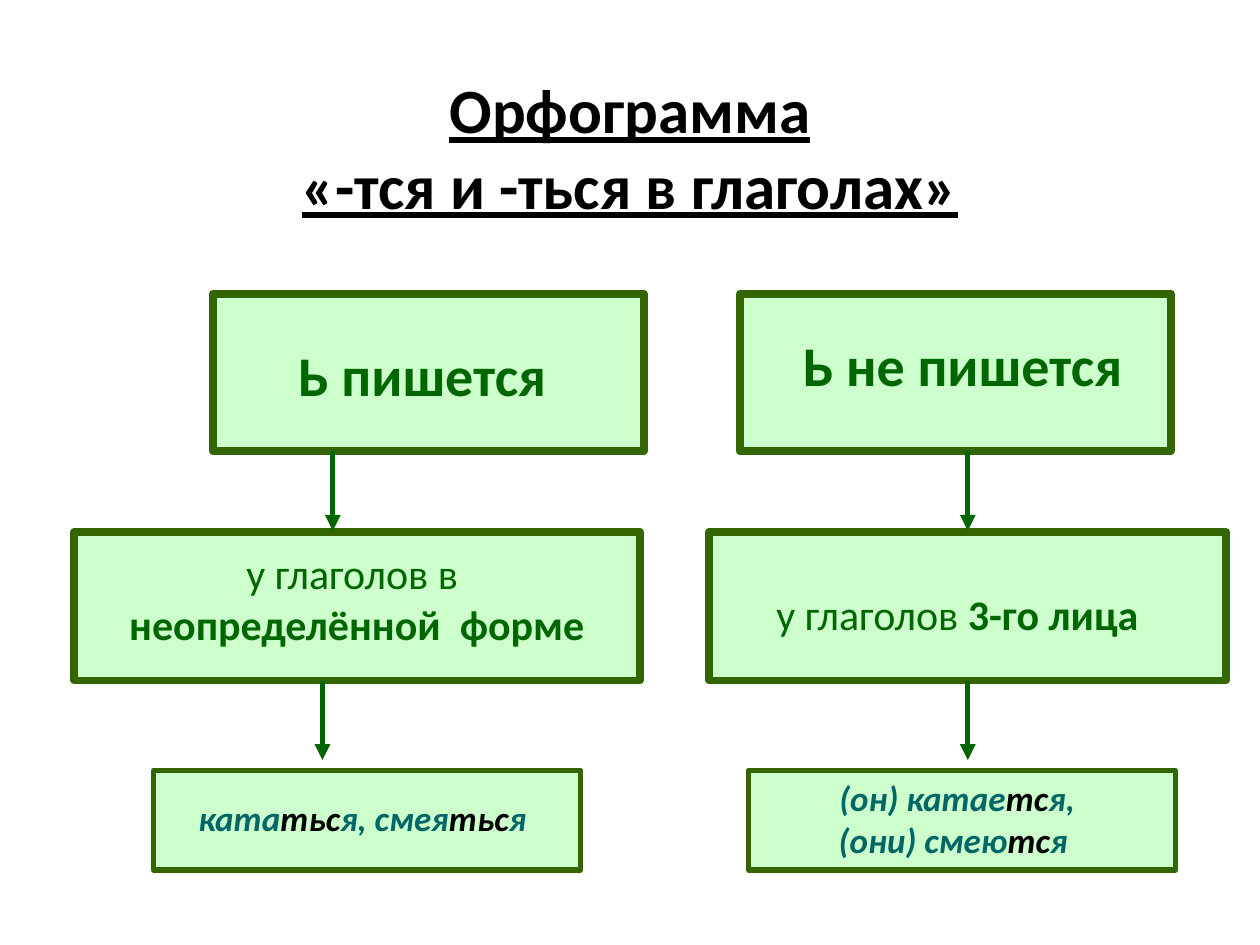
from pptx import Presentation
from pptx.util import Cm, Pt
from pptx.dml.color import RGBColor as Rgb
from pptx.enum.shapes import MSO_SHAPE as Shape, MSO_CONNECTOR as Line
from pptx.enum.text import PP_ALIGN as Align, MSO_ANCHOR as Anchor, MSO_AUTO_SIZE as Fit
from pptx.oxml.ns import qn
from lxml.etree import SubElement as Sub

THEME = {
    "font": "Calibri", "ink": "000000", "fill": "CCFFCC", "edge": "336600",
    "green": "006600", "teal": "006666",
    "title": 36, "head": 32, "rule": 24, "case": 20,
}

# A paragraph is a list of runs; a run marked True is emphasised.
TITLE = ("Орфограмма", "«-тся и -ться в глаголах»")

# Each row: top, height and edge width, kind of text, and two nodes.
# Each node: box left and width, text frame, paragraphs.
ROWS = [
    (5.92, 3.18, 4.5, "head", [
        (4.29, 8.69, (4.7, 6.73, 7.62, 1.6), [[("Ь пишется", True)]]),
        (14.91, 8.69, (14.91, 6.53, 8.99, 1.6), [[("Ь не пишется", True)]]),
    ]),
    (10.72, 3, 4.5, "rule", [
        (1.5, 11.4, (1.3, 10.92, 11.79, 2.29),
         [[("у глаголов в ", False)], [("неопределённой  форме", True)]]),
        (14.3, 10.41, (14.5, 11.73, 9.6, 1.27),
         [[("у глаголов ", False), ("3-го лица", True)]]),
    ]),
    (15.53, 2.01, 3, "case", [
        (3.1, 8.61, (3.1, 15.93, 8.41, 1.09),
         [[("ката", False), ("тьс", True), ("я, смея", False),
           ("тьс", True), ("я", False)]]),
        (15.09, 8.61, (15.09, 15.52, 8.41, 1.96),
         [[("(он) катае", False), ("тс", True), ("я,", False)],
          [("(они) смею", False), ("тс", True), ("я ", False)]]),
    ]),
]
ARROWS = [(6.71, 19.51), (6.5, 19.51)]  # x places below rows one and two
DROP = 1.6


def color(name):
    return Rgb.from_string(THEME[name])


def style(font, size, tint, bold=False, italic=False, under=False):
    font.name, font.size = THEME["font"], Pt(THEME[size])
    font.bold, font.italic, font.underline = bold, italic, under
    font.color.rgb = color(tint)


def text(slide, frame, paras, anchor=Anchor.TOP, fit=Fit.SHAPE_TO_FIT_TEXT):
    """Add centred paragraphs; each run is (words, format), None breaks a line."""
    body = slide.shapes.add_textbox(*map(Cm, frame)).text_frame
    body.word_wrap, body.auto_size = True, fit
    body.vertical_anchor = anchor
    for i, runs in enumerate(paras):
        para = body.add_paragraph() if i else body.paragraphs[0]
        para.alignment = Align.CENTER
        for item in runs:
            if item is None:
                para.add_line_break()
                continue
            run = para.add_run()
            run.text = item[0]
            style(run.font, **item[1])


def look(kind, strong):
    if kind == "case":
        tint = "ink" if strong else "teal"
        return dict(size=kind, tint=tint, bold=True, italic=True)
    return dict(size=kind, tint="green", bold=strong)


def box(slide, left, top, width, height, edge):
    rect = slide.shapes.add_shape(
        Shape.RECTANGLE, Cm(left), Cm(top), Cm(width), Cm(height))
    rect.shadow.inherit = False
    rect.fill.solid()
    rect.fill.fore_color.rgb = color("fill")
    rect.line.color.rgb = color("edge")
    rect.line.width = Pt(edge)


def arrow(slide, x, top):
    link = slide.shapes.add_connector(
        Line.STRAIGHT, Cm(x), Cm(top), Cm(x), Cm(top + DROP))
    link.line.color.rgb = color("green")
    link.line.width = Pt(3)
    Sub(link.line._get_or_add_ln(), qn("a:tailEnd"), type="triangle")
    Sub(link._element.spPr, qn("a:effectLst"))


def main():
    deck = Presentation()
    deck.slide_width, deck.slide_height = Cm(25.4), Cm(19.05)
    slide = deck.slides.add_slide(deck.slide_layouts[6])
    form = dict(size="title", tint="ink", bold=True, under=True)
    first, last = [(words, form) for words in TITLE]
    text(slide, (1.27, 0.76, 22.86, 4.37), [[first, None, last]],
         anchor=Anchor.MIDDLE, fit=Fit.NONE)
    for top, height, edge, kind, nodes in ROWS:
        for left, width, frame, paras in nodes:
            box(slide, left, top, width, height, edge)
            text(slide, frame, [[(words, look(kind, strong))
                                 for words, strong in runs] for runs in paras])
    for (top, height, *_), places in zip(ROWS, ARROWS):
        for x in places:
            arrow(slide, x, top + height)
    deck.save("out.pptx")


if __name__ == "__main__":
    main()
